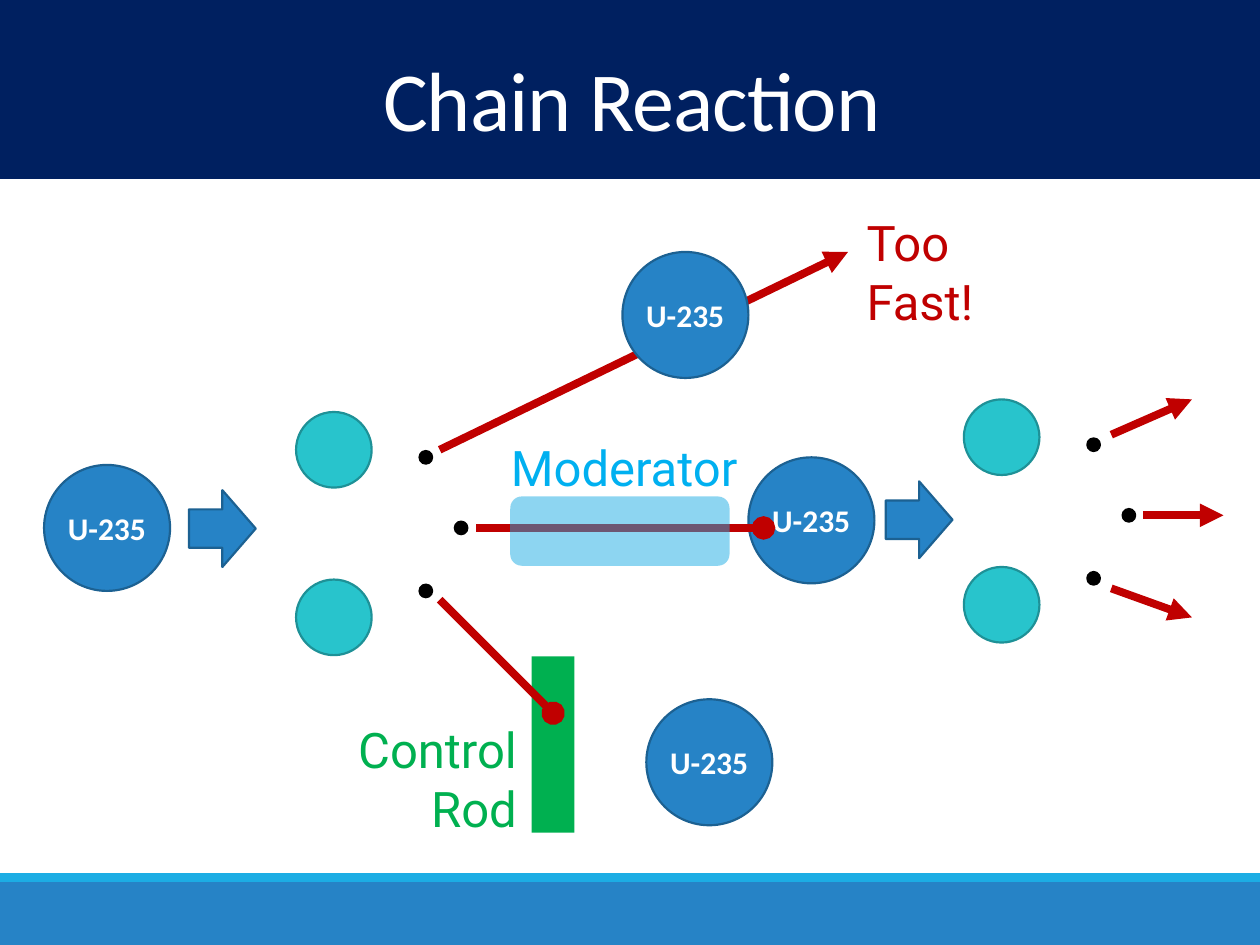
from lxml import etree
from pptx import Presentation
from pptx.dml.color import RGBColor
from pptx.enum.shapes import MSO_CONNECTOR, MSO_SHAPE
from pptx.enum.text import MSO_ANCHOR, MSO_AUTO_SIZE, PP_ALIGN
from pptx.oxml.ns import qn
from pptx.util import Inches, Pt

COLORS = {
    "navy": "002060", "white": "FFFFFF", "black": "000000",
    "blue": "2683C6", "blue_edge": "1C6192",
    "teal": "28C4CC", "teal_edge": "1E9197",
    "cyan": "1CADE4", "sky": "00B0F0", "green": "00B050", "red": "C00000",
}
NUCLEUS_SIZE = 1
FRAGMENT_SIZE = 0.6
NEUTRON_SIZE = 0.1


def color(name):
    return RGBColor.from_string(COLORS[name])


def add_filled_shape(slide, kind, left, top, width, height, fill, edge=None):
    shape = slide.shapes.add_shape(
        kind, Inches(left), Inches(top), Inches(width), Inches(height))
    shape.shadow.inherit = False
    shape.fill.solid()
    shape.fill.fore_color.rgb = color(fill)
    if edge:
        shape.line.color.rgb = color(edge)
        shape.line.width = Pt(1.25)
    else:
        shape.line.fill.background()
    return shape


def add_circle(slide, left, top, size, fill, edge):
    return add_filled_shape(slide, MSO_SHAPE.OVAL, left, top, size, size, fill, edge)


def style_run(run, font_name, size, font_color, bold=False):
    run.font.name = font_name
    run.font.size = Pt(size)
    run.font.bold = bold
    run.font.color.rgb = color(font_color)


def add_label(slide, text, left, top, width, height, font_color, font_name="Roboto",
              size=28, bold=False, wrap=True, align=PP_ALIGN.LEFT):
    box = slide.shapes.add_textbox(
        Inches(left), Inches(top), Inches(width), Inches(height))
    frame = box.text_frame
    frame.word_wrap = wrap
    frame.auto_size = MSO_AUTO_SIZE.SHAPE_TO_FIT_TEXT
    paragraph = frame.paragraphs[0]
    paragraph.alignment = align
    run = paragraph.add_run()
    run.text = text
    style_run(run, font_name, size, font_color, bold)


def add_neutron_path(slide, start, end, tip="triangle"):
    connector = slide.shapes.add_connector(
        MSO_CONNECTOR.STRAIGHT, *(Inches(value) for value in (*start, *end)))
    connector.line.color.rgb = color("red")
    connector.line.width = Pt(4.5)
    line = connector.line._get_or_add_ln()
    etree.SubElement(line, qn("a:tailEnd"), type=tip)
    etree.SubElement(connector.element.spPr, qn("a:effectLst"))


def add_nucleus(slide, left, top):
    add_circle(slide, left, top, NUCLEUS_SIZE, "blue", "blue_edge")
    add_label(slide, "U-235", left + 0.09, top + 0.3, 0.82, 0.4, "white",
              font_name="Calibri", size=18, bold=True, wrap=False)


def add_fission(slide, left, top):
    """Two fragments and three free neutrons."""
    for offset in (0, 1.33):
        add_circle(slide, left, top + offset, FRAGMENT_SIZE, "teal", "teal_edge")
    for x, y in ((0.98, 0.31), (1.26, 0.87), (0.98, 1.37)):
        add_circle(slide, left + x, top + y, NEUTRON_SIZE, "black", "black")


def add_reaction_arrow(slide, left, top):
    add_filled_shape(slide, MSO_SHAPE.RIGHT_ARROW, left, top, 0.53, 0.61,
                     "blue", "blue_edge")


def add_header(slide, left, top, width, height):
    banner = add_filled_shape(
        slide, MSO_SHAPE.RECTANGLE, left, top, width, height, "navy")
    title = slide.shapes.title
    title.element.addprevious(banner.element)  # banner goes behind the title
    title.left, title.top = Inches(left + 0.03), Inches(top + 0.42)
    title.width, title.height = Inches(width - 0.03), Inches(0.84)
    frame = title.text_frame
    frame.vertical_anchor = MSO_ANCHOR.MIDDLE
    frame.word_wrap = True
    paragraph = frame.paragraphs[0]
    paragraph.alignment = PP_ALIGN.CENTER
    paragraph.line_spacing = 0.85
    run = paragraph.add_run()
    run.text = "Chain Reaction"
    style_run(run, "Calibri", 48, "white")
    run.font._element.set("spc", "-50")


def add_footer(slide, left, top, width, height):
    stripe = 0.07
    add_filled_shape(slide, MSO_SHAPE.RECTANGLE, left, top + stripe,
                     width, height - stripe, "blue")
    add_filled_shape(slide, MSO_SHAPE.RECTANGLE, left, top, width, stripe, "cyan")


def add_first_fission(slide, left, top):
    add_nucleus(slide, left, top)
    add_reaction_arrow(slide, left + 1.15, top + 0.2)
    add_fission(slide, left + 2, top - 0.42)


def add_fast_neutron(slide, left, top):
    add_neutron_path(slide, (left, top + 1.57), (left + 3.24, top))
    add_nucleus(slide, left + 1.45, top)
    add_label(slide, "Too Fast!", left + 3.29, top - 0.36, 1.7, 1.04, "red")


def add_moderated_neutron(slide, left, top):
    add_nucleus(slide, left + 2.16, top - 0.56)
    add_neutron_path(slide, (left, top), (left + 2.28, top), "oval")
    moderator = add_filled_shape(slide, MSO_SHAPE.ROUNDED_RECTANGLE,
                                 left + 0.27, top - 0.25, 1.74, 0.55, "cyan")
    fill_color = moderator.element.spPr.find(f"{qn('a:solidFill')}/{qn('a:srgbClr')}")
    etree.SubElement(fill_color, qn("a:alpha"), val="50000")
    add_label(slide, "Moderator", left - 0.02, top - 0.77, 2.19, 0.57, "sky",
              align=PP_ALIGN.RIGHT)


def add_absorbed_neutron(slide, left, top):
    add_filled_shape(slide, MSO_SHAPE.RECTANGLE, left + 0.73, top + 0.45,
                     0.34, 1.4, "green")
    add_neutron_path(slide, (left, top), (left + 0.9, top + 0.9), "oval")
    add_nucleus(slide, left + 1.64, top + 0.79)
    add_label(slide, "Control Rod", left - 0.99, top + 0.9, 1.7, 1.04, "green",
              align=PP_ALIGN.RIGHT)


def add_second_fission(slide, left, top):
    add_reaction_arrow(slide, left, top + 0.65)
    add_fission(slide, left + 0.62, top)
    for x, start_y, end_y in ((1.79, 0.28, 0), (2.04, 0.92, 0.92), (1.79, 1.5, 1.73)):
        add_neutron_path(slide, (left + x, top + start_y),
                         (left + x + 0.64, top + end_y))


def main():
    presentation = Presentation()
    presentation.slide_width, presentation.slide_height = Inches(10), Inches(7.5)
    slide = presentation.slides.add_slide(presentation.slide_layouts[5])

    # Frame
    add_footer(slide, 0, 6.93, 10, 0.57)
    add_header(slide, 0, 0, 10, 1.42)

    # Reaction, left to right
    add_first_fission(slide, 0.35, 3.69)
    add_fast_neutron(slide, 3.49, 2)
    add_moderated_neutron(slide, 3.78, 4.19)
    add_absorbed_neutron(slide, 3.49, 4.76)
    add_second_fission(slide, 7.03, 3.17)

    presentation.save("out.pptx")


if __name__ == "__main__":
    main()
